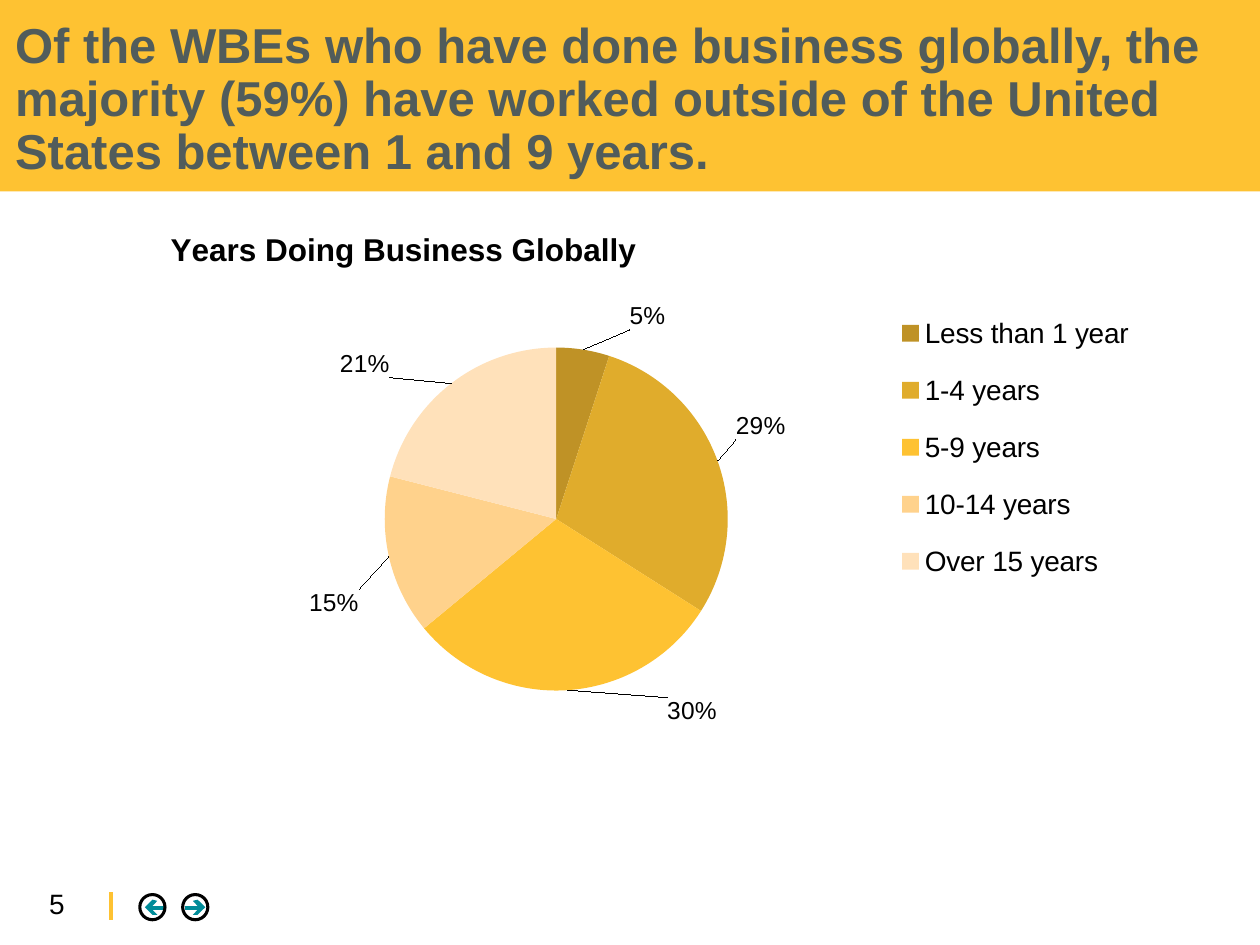
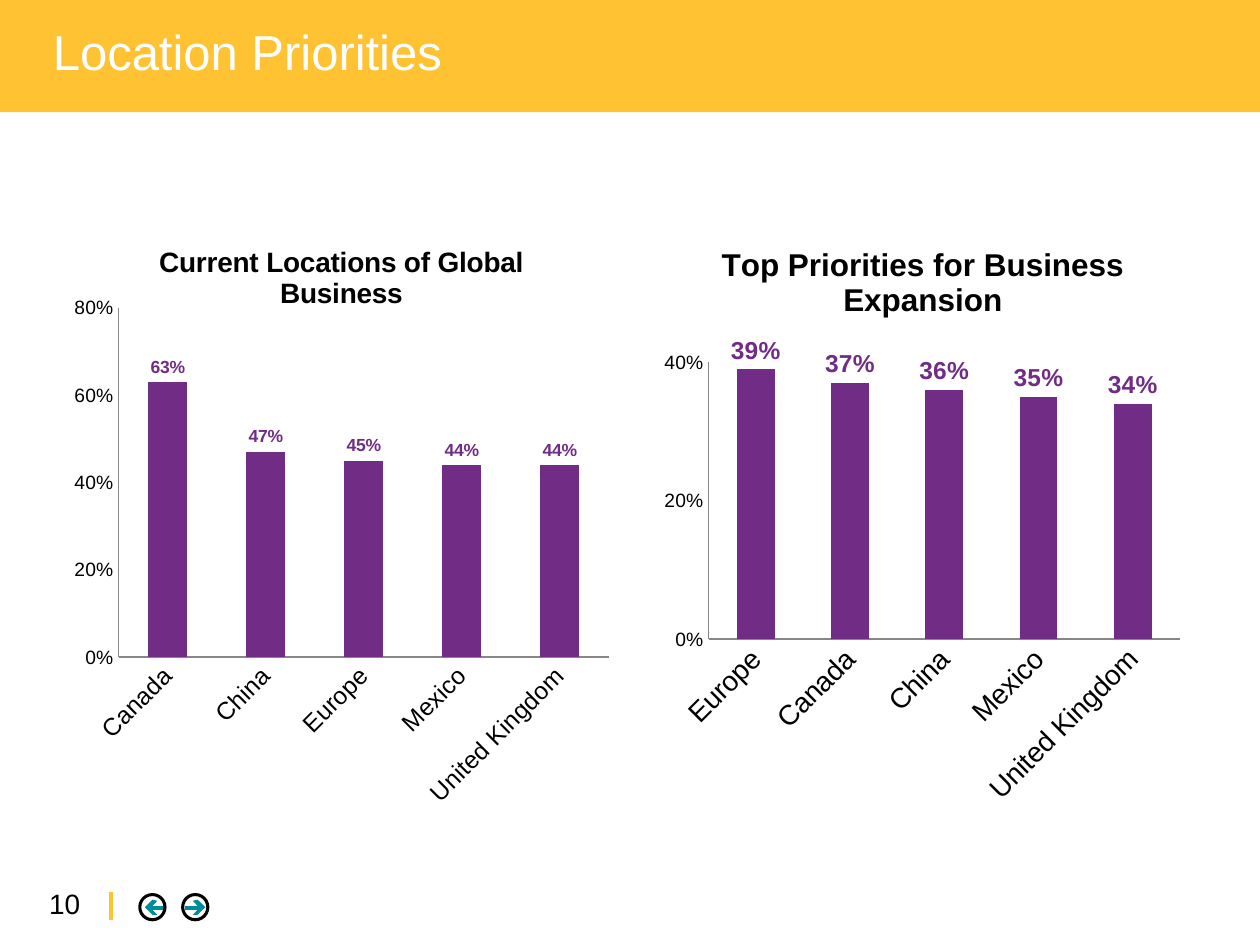
import pptx
import pptx.chart.data
import pptx.dml.color
import pptx.enum.chart
import pptx.enum.shapes
import pptx.enum.text
import pptx.oxml
import pptx.oxml.ns
import pptx.util

RGBColor = pptx.dml.color.RGBColor
GOLD = RGBColor(0xFE, 0xC2, 0x32)
SLATE = RGBColor(0x51, 0x5C, 0x5B)
TEAL = RGBColor(0x00, 0x8C, 0x99)
PURPLE = RGBColor(0x71, 0x2C, 0x86)
AXIS_GRAY = RGBColor(0x87, 0x87, 0x87)
BLACK = RGBColor(0, 0, 0)
WHITE = RGBColor(255, 255, 255)
PIE_COLORS = [
    RGBColor(0xBF, 0x92, 0x26),
    RGBColor(0xE0, 0xAC, 0x2C),
    GOLD,
    RGBColor(0xFF, 0xD2, 0x8C),
    RGBColor(0xFF, 0xE1, 0xBA),
]
FONT = "Arial"
SLIDE_WIDTH = pptx.util.Inches(10)
SLIDE_HEIGHT = pptx.util.Inches(7.5)
GRID_COLUMNS, GRID_ROWS = 100, 75
ARROW_OUTLINE = [
    (0, 0.42), (0.62, 0.42), (0.38, 0.08), (0.62, 0), (1, 0.5),
    (0.62, 1), (0.38, 1), (0.62, 0.67), (0, 0.67),
]


def columns(count):
    return round(SLIDE_WIDTH * count / GRID_COLUMNS)


def rows(count):
    return round(SLIDE_HEIGHT * count / GRID_ROWS)


def place(left, top, width, height):
    return columns(left), rows(top), columns(width), rows(height)


def format_font(font, size, color=BLACK, bold=False):
    font.name = FONT
    font.size = pptx.util.Pt(size)
    font.bold = bold
    font.color.rgb = color


def write(text_frame, text, size=16, color=BLACK, bold=False, spacing=None):
    paragraph = text_frame.paragraphs[0]
    run = paragraph.add_run()
    run.text = text
    format_font(run.font, size, color, bold)
    if spacing:
        paragraph.line_spacing = spacing


def add_text(slide, text, area, anchor=pptx.enum.text.MSO_ANCHOR.TOP, **text_format):
    text_frame = slide.shapes.add_textbox(*place(*area)).text_frame
    text_frame.margin_left = text_frame.margin_right = 0
    text_frame.margin_top = text_frame.margin_bottom = 0
    text_frame.word_wrap = True
    text_frame.vertical_anchor = anchor
    write(text_frame, text, **text_format)


def add_band(slide, height):
    band = slide.shapes.add_shape(
        pptx.enum.shapes.MSO_SHAPE.RECTANGLE, *place(0, 0, GRID_COLUMNS, height))
    band.shadow.inherit = False
    band.fill.solid()
    band.fill.fore_color.rgb = GOLD
    band.line.fill.background()


def add_arrow_button(slide, circle_left, arrow_left, points_right):
    points = [
        (columns(arrow_left + 1.6 * (x if points_right else 1 - x)), rows(71.4 + 1.2 * y))
        for x, y in ARROW_OUTLINE
    ]
    builder = slide.shapes.build_freeform(*points[0])
    builder.add_line_segments(points[1:], close=True)
    arrow = builder.convert_to_shape()
    arrow.shadow.inherit = False
    arrow.fill.solid()
    arrow.fill.fore_color.rgb = TEAL
    arrow.line.fill.background()
    circle = slide.shapes.add_shape(
        pptx.enum.shapes.MSO_SHAPE.OVAL, *place(circle_left, 71, 2, 2))
    circle.shadow.inherit = False
    circle.fill.background()
    circle.line.color.rgb = BLACK
    circle.line.width = pptx.util.Pt(1.75)


def add_footer(slide, number):
    add_text(slide, number, (3.9, 70.4, 4.5, 2.7))
    divider = slide.shapes.add_connector(
        pptx.enum.shapes.MSO_CONNECTOR.STRAIGHT,
        columns(8.8), rows(70.8), columns(8.8), rows(73))
    divider.line.color.rgb = GOLD
    divider.line.width = pptx.util.Pt(2)
    divider.element.spPr.append(pptx.oxml.parse_xml(
        f"<a:effectLst {pptx.oxml.ns.nsdecls('a')}/>"))
    add_arrow_button(slide, 11.1, 11.5, False)
    add_arrow_button(slide, 14.5, 14.7, True)


def add_slide(presentation, number, band_height, title, title_area, **title_format):
    slide = presentation.slides.add_slide(presentation.slide_layouts[6])
    add_band(slide, band_height)
    add_text(slide, title, title_area, anchor=pptx.enum.text.MSO_ANCHOR.MIDDLE,
             size=28, spacing=0.9, **title_format)
    add_footer(slide, number)
    return slide


def set_layout(element, index, x, y, width=None, height=None, inner=False, edge=True):
    for layout in element.findall(pptx.oxml.ns.qn("c:layout")):
        element.remove(layout)
    settings = [("layoutTarget", "inner")] if inner else []
    if edge:
        settings += [("xMode", "edge"), ("yMode", "edge")]
    settings += [("x", x), ("y", y)]
    if width:
        settings += [("w", width), ("h", height)]
    body = "".join(f'<c:{name} val="{value}"/>' for name, value in settings)
    element.insert(index, pptx.oxml.parse_xml(
        f"<c:layout {pptx.oxml.ns.nsdecls('c')}>"
        f"<c:manualLayout>{body}</c:manualLayout></c:layout>"))


def add_chart(slide, kind, area, title, title_size, values, number_format, plot_area):
    data = pptx.chart.data.CategoryChartData(number_format=number_format)
    data.categories = list(values)
    data.add_series("Series 1", list(values.values()))
    chart = slide.shapes.add_chart(kind, *place(*area), data).chart
    format_font(chart.font, 10)
    chart.has_title = True
    write(chart.chart_title.text_frame, title, size=title_size, bold=True)
    chart.chart_title.include_in_layout = False
    chart.has_legend = False
    set_layout(chart.element.xpath("c:chart/c:plotArea")[0], 0, *plot_area, inner=True)
    return chart


def add_pie_chart(slide, area, title, values, plot_area, label_shifts):
    chart = add_chart(slide, pptx.enum.chart.XL_CHART_TYPE.PIE, area, title, 18,
                      values, "0", plot_area)
    set_layout(chart.element.xpath("c:chart/c:title")[0], 1, 0.09, 0.03)
    chart.has_legend = True
    chart.legend.position = pptx.enum.chart.XL_LEGEND_POSITION.RIGHT
    chart.legend.include_in_layout = False
    format_font(chart.legend.font, 16)
    set_layout(chart.legend.element if hasattr(chart.legend, "element")
               else chart.element.xpath("c:chart/c:legend")[0], 1, 0.7, 0.14, 0.28, 0.5)
    series = chart.plots[0].series[0]
    labels = series.data_labels
    labels.show_value = False
    labels.show_percentage = True
    labels.number_format = "0%"
    labels.number_format_is_linked = False
    format_font(labels.font, 14)
    for index, (color, shift) in enumerate(zip(PIE_COLORS, label_shifts)):
        point = series.points[index]
        point.format.fill.solid()
        point.format.fill.fore_color.rgb = color
        format_font(point.data_label.font, 14)
        point.data_label.position = pptx.enum.chart.XL_LABEL_POSITION.OUTSIDE_END
        label = chart.element.xpath(f".//c:dLbl[c:idx/@val='{index}']")[0]
        label.find(pptx.oxml.ns.qn("c:showVal")).set("val", "0")
        label.find(pptx.oxml.ns.qn("c:showPercent")).set("val", "1")
        set_layout(label, 1, *shift, edge=False)
        label.insert(2, pptx.oxml.parse_xml(
            f"<c:numFmt {pptx.oxml.ns.nsdecls('c')} formatCode='0%' sourceLinked='0'/>"))


def add_column_chart(slide, area, title, title_size, values, plot_area,
                     maximum, category_size, label_size):
    chart = add_chart(slide, pptx.enum.chart.XL_CHART_TYPE.COLUMN_CLUSTERED, area,
                      title, title_size, values, "0%", plot_area)
    for axis, size in ((chart.category_axis, category_size), (chart.value_axis, 11)):
        axis.has_major_gridlines = False
        axis.major_tick_mark = pptx.enum.chart.XL_TICK_MARK.NONE
        axis.format.line.color.rgb = AXIS_GRAY
        axis.format.line.width = pptx.util.Pt(0.75)
        format_font(axis.tick_labels.font, size)
    chart.element.xpath(".//c:catAx/c:txPr/a:bodyPr")[0].set("rot", "-2700000")
    chart.value_axis.minimum_scale = 0
    chart.value_axis.maximum_scale = maximum
    chart.value_axis.major_unit = 0.2
    chart.value_axis.tick_labels.number_format = "0%"
    chart.value_axis.tick_labels.number_format_is_linked = False
    plot = chart.plots[0]
    plot.vary_by_categories = False
    plot.gap_width = 150
    series = plot.series[0]
    series.format.fill.solid()
    series.format.fill.fore_color.rgb = PURPLE
    labels = series.data_labels
    labels.show_value = True
    labels.number_format = "0%"
    labels.number_format_is_linked = False
    labels.position = pptx.enum.chart.XL_LABEL_POSITION.OUTSIDE_END
    format_font(labels.font, label_size, PURPLE, bold=True)


def main():
    presentation = pptx.Presentation()
    presentation.slide_width = SLIDE_WIDTH
    presentation.slide_height = SLIDE_HEIGHT

    years_slide = add_slide(
        presentation, "5", 15.2,
        "Of the WBEs who have done business globally, the majority (59%) have worked "
        "outside of the United States between 1 and 9 years.",
        (1.2, 3, 98.8, 9.9), color=SLATE, bold=True)
    add_pie_chart(
        years_slide, (5, 16.2, 90, 49.5), "Years Doing Business Globally",
        {"Less than 1 year": 5, "1-4 years": 29, "5-9 years": 30,
         "10-14 years": 15, "Over 15 years": 21},
        (0.28, 0.23, 0.31, 0.55),
        [(0.04, -0.02), (0.01, -0.03), (0.11, 0), (-0.02, 0.05), (-0.05, 0)])

    locations_slide = add_slide(
        presentation, "10", 8.9, "Location Priorities",
        (4.2, 0, 91.6, 8.7), color=WHITE)
    add_column_chart(
        locations_slide, (5, 17.5, 44.2, 49.5), "Current Locations of Global Business", 16,
        {"Canada": 0.63, "China": 0.47, "Europe": 0.45, "Mexico": 0.44,
         "United Kingdom": 0.44},
        (0.1, 0.14, 0.88, 0.56), maximum=0.8, category_size=14, label_size=10)
    add_column_chart(
        locations_slide, (52, 17.2, 42.5, 57.8), "Top Priorities for Business Expansion", 18,
        {"Europe": 0.39, "Canada": 0.37, "China": 0.36, "Mexico": 0.35,
         "United Kingdom": 0.34},
        (0.1, 0.2, 0.88, 0.38), maximum=0.4, category_size=16, label_size=14)

    presentation.save("out.pptx")


if __name__ == "__main__":
    main()
